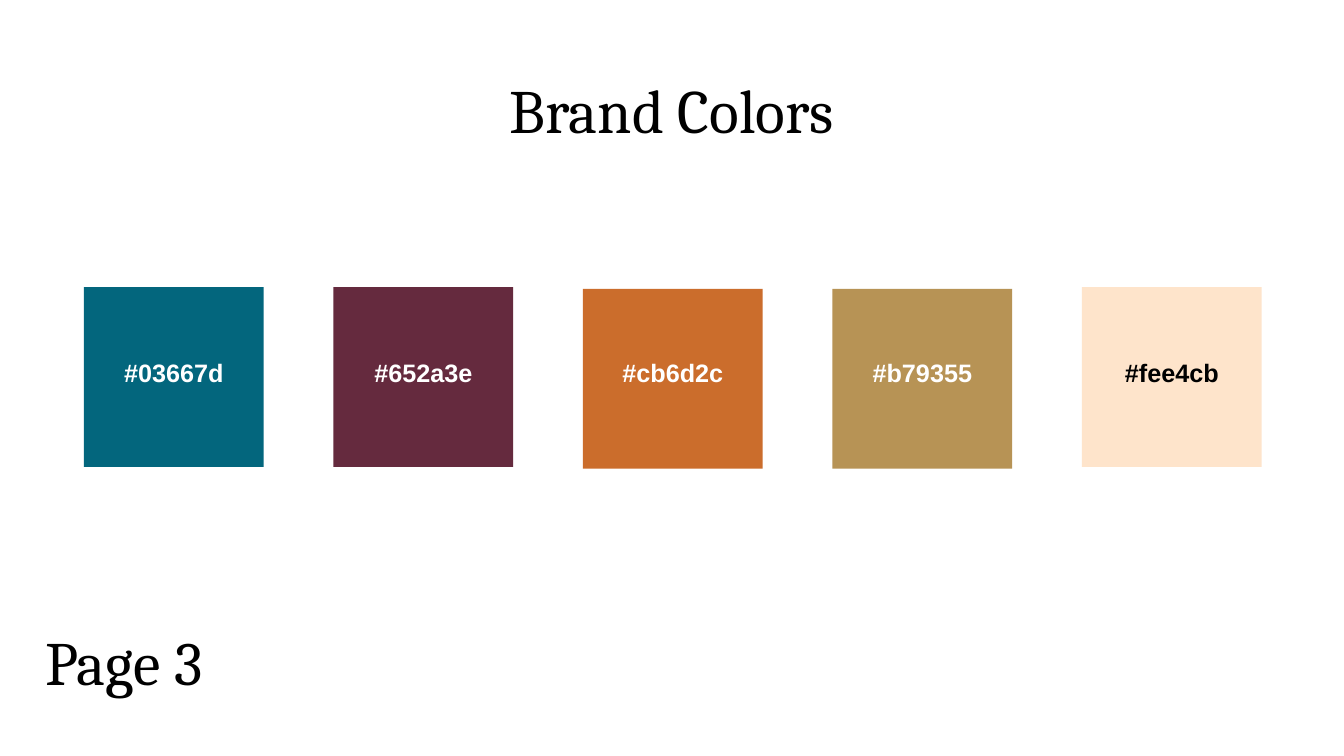
from pptx import Presentation, util as u
from pptx.dml.color import RGBColor
from pptx.enum import shapes, text

TEAL = RGBColor(0x03, 0x66, 0x7D)
WINE = RGBColor(0x65, 0x2A, 0x3E)
ORANGE = RGBColor(0xCB, 0x6D, 0x2C)
GOLD = RGBColor(0xB7, 0x93, 0x55)
CREAM = RGBColor(0xFE, 0xE4, 0xCB)
WHITE = RGBColor(0xFF, 0xFF, 0xFF)
BLACK = RGBColor(0, 0, 0)

COLS, ROWS = 16, 9
PITCH, SIDE = 2.97, 2.14
LABEL_WIDTH = 1.92


class Deck:
    """Holds the text styles and the current slide, laid out on a 16 by 9 grid."""

    heading = {"name": "Cambria", "size": u.Pt(44)}
    label = {"name": "Arial", "size": u.Pt(18), "bold": True}

    def __init__(self):
        self.prs = Presentation()
        self.prs.slide_width, self.prs.slide_height = u.Inches(13.33), u.Inches(7.5)
        self.s = self.prs.slides.add_slide(self.prs.slide_layouts[6])

    def box(self, col, row, width, height):
        dx, dy = self.prs.slide_width / COLS, self.prs.slide_height / ROWS
        return [round(v) for v in (col * dx, row * dy, width * dx, height * dy)]

    def add_text(self, parent, words, area, style, color=BLACK, spacing=1.0,
                 align=text.PP_ALIGN.CENTER, anchor=text.MSO_ANCHOR.TOP):
        tf = parent.shapes.add_textbox(*self.box(*area)).text_frame
        tf.word_wrap, tf.vertical_anchor = True, anchor
        p = tf.paragraphs[0]
        p.alignment, p.line_spacing = align, spacing
        r = p.add_run()
        r.text = words
        for key, value in style.items():
            setattr(r.font, key, value)
        r.font.color.rgb = color

    def add_swatch(self, col, row, fill, ink):
        group = self.s.shapes.add_group_shape()
        sp = group.shapes.add_shape(shapes.MSO_SHAPE.RECTANGLE,
                                    *self.box(col, row, SIDE, SIDE))
        sp.shadow.inherit = False
        sp.fill.solid()
        sp.fill.fore_color.rgb = fill
        sp.line.fill.background()
        area = (col + (SIDE - LABEL_WIDTH) / 2, 4.2, LABEL_WIDTH, 0.58)
        self.add_text(group, f"#{fill}".lower(), area, self.label, ink)


def main():
    deck = Deck()
    deck.add_text(deck.s, "Brand Colors", (1.1, 0.48, 13.8, 1.74), deck.heading,
                  spacing=0.9, anchor=text.MSO_ANCHOR.MIDDLE)
    swatches = [(TEAL, 3.42, WHITE), (WINE, 3.42, WHITE), (ORANGE, 3.44, WHITE),
                (GOLD, 3.44, WHITE), (CREAM, 3.42, BLACK)]
    for i, (fill, row, ink) in enumerate(swatches):
        deck.add_swatch(1 + i * PITCH, row, fill, ink)
    deck.add_text(deck.s, "Page 3", (0.42, 7.37, 3.28, 1.01), deck.heading,
                  align=text.PP_ALIGN.LEFT)
    deck.prs.save("out.pptx")


if __name__ == "__main__":
    main()
